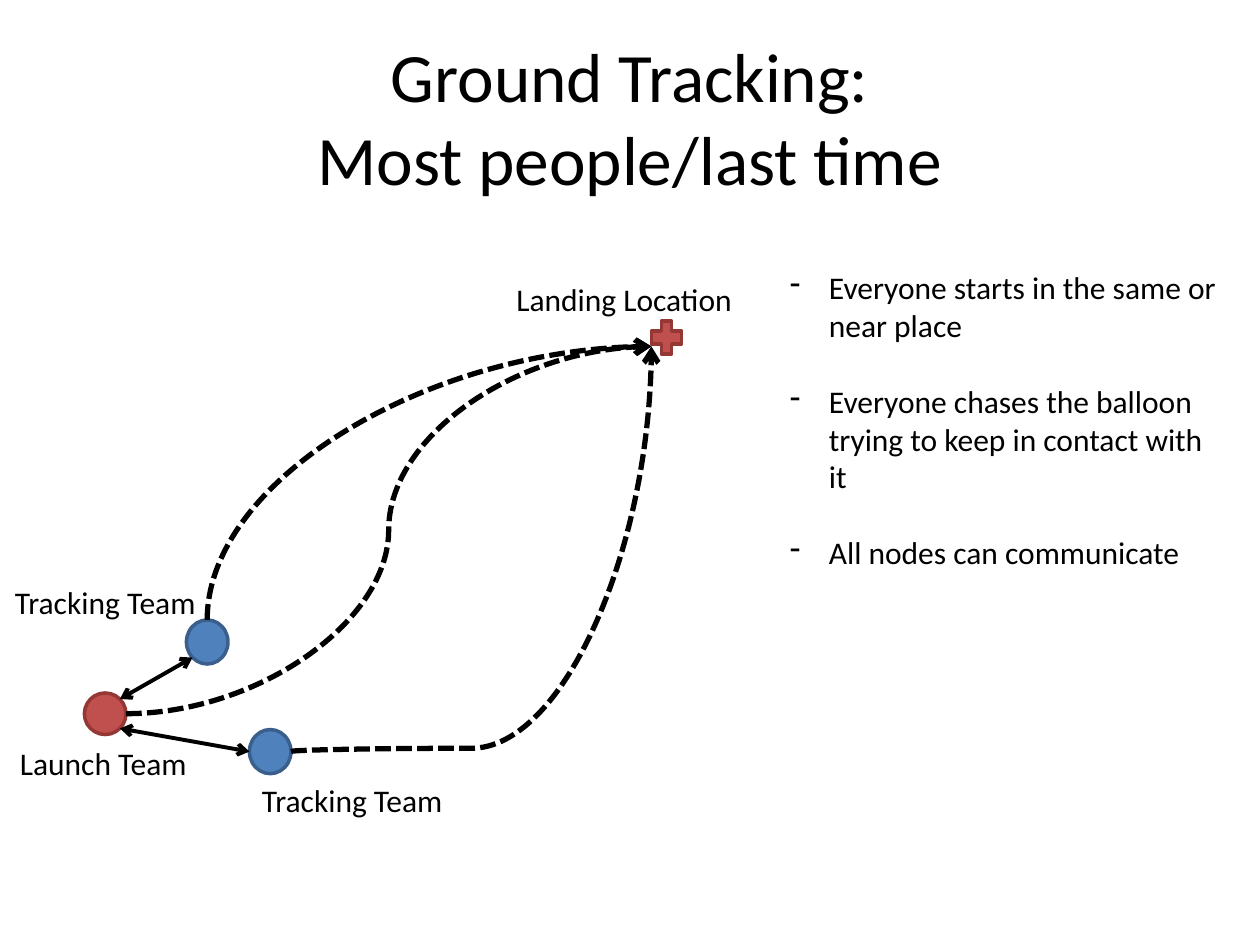
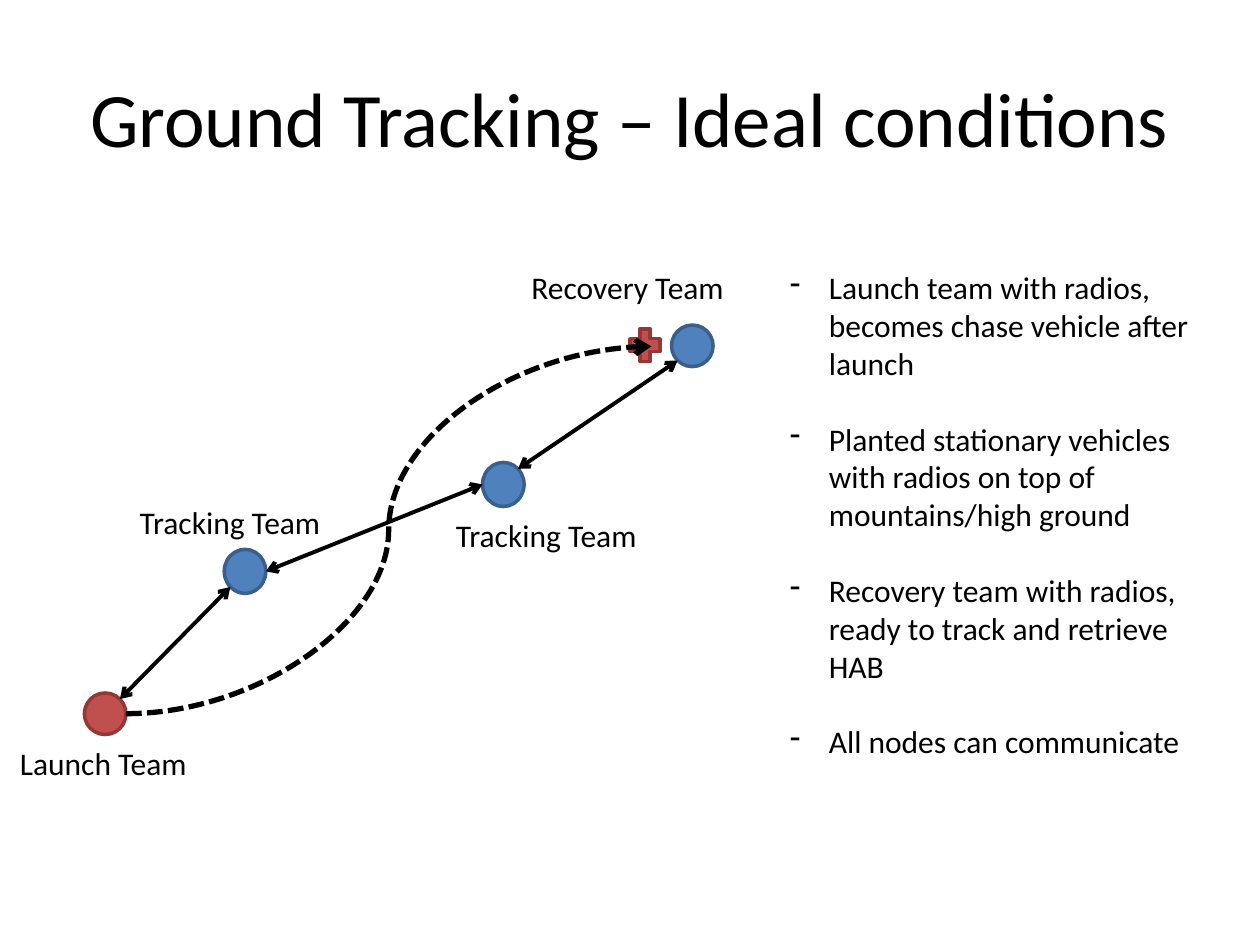
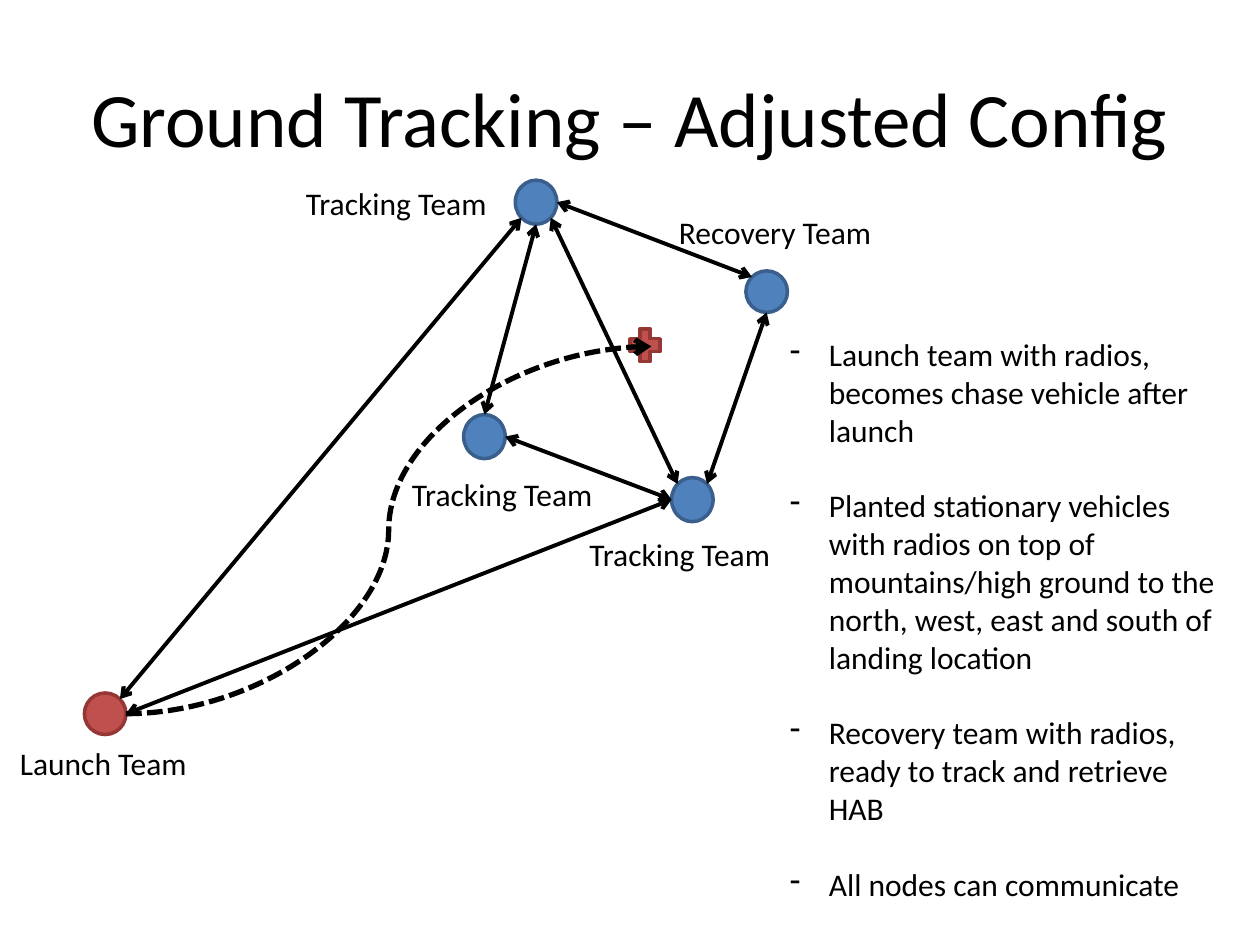
from dataclasses import dataclass
from math import sqrt

from lxml import etree
from pptx import Presentation
from pptx.dml.color import RGBColor
from pptx.enum.dml import MSO_LINE
from pptx.enum.shapes import MSO_CONNECTOR, MSO_SHAPE
from pptx.enum.text import MSO_ANCHOR, PP_ALIGN
from pptx.oxml.ns import qn
from pptx.util import Inches, Pt

OVAL, CROSS = MSO_SHAPE.OVAL, MSO_SHAPE.CROSS
STRAIGHT, CURVE = MSO_CONNECTOR.STRAIGHT, MSO_CONNECTOR.CURVE
DASHED = MSO_LINE.SQUARE_DOT
CENTER, MIDDLE = PP_ALIGN.CENTER, MSO_ANCHOR.MIDDLE

FONT = "Calibri"
BLACK = "000000"
RED, RED_EDGE = "C0504D", "953735"
BLUE, BLUE_EDGE = "4F81BD", "3A5F8C"
BODY_SIZE = 18
BODY_GAP = 21.7
LABEL_HEIGHT = 0.4
LABEL_WIDTHS = {"Tracking Team": 1.65, "Launch Team": 1.54,
                "Recovery Team": 1.74, "Landing Location": 1.94}

# Points on a circle, as fractions of its radii
DIAGONAL = sqrt(0.5)
SITES = {"N": (0, -1), "S": (0, 1), "W": (-1, 0), "E": (1, 0),
         "NW": (-DIAGONAL, -DIAGONAL), "NE": (DIAGONAL, -DIAGONAL),
         "SW": (-DIAGONAL, DIAGONAL), "SE": (DIAGONAL, DIAGONAL)}


@dataclass
class Box:
    left: float
    top: float
    width: float
    height: float

    def inside(self, left, top, width, height):
        return Box(self.left + left, self.top + top, width, height)

    def lengths(self):
        return [Inches(n) for n in (self.left, self.top, self.width, self.height)]

    def site(self, name):
        across, down = SITES[name]
        return (self.left + self.width * (1 + across) / 2,
                self.top + self.height * (1 + down) / 2)


TITLE_BOX = Box(0.5, 0.3, 9, 1.25)
MAP_BOX = Box(0, 1.4, 6.3, 5.2)
LANDING_POINT = (5.17, 1.35)
LAUNCH_SPOT = (0.67, 4.1)


def color(value):
    return RGBColor.from_string(value)


# Text
def format_text(frame, size):
    for para in frame.paragraphs:
        for span in para.runs:
            span.font.name = FONT
            span.font.size = Pt(size)
            span.font.color.rgb = color(BLACK)


def add_text(page, box, text, size, wrap=True):
    frame = page.shapes.add_textbox(*box.lengths()).text_frame
    frame.word_wrap = wrap
    frame.text = text
    format_text(frame, size)
    return frame


def add_title(page, box, text, size):
    frame = add_text(page, box, text, size)
    frame.vertical_anchor = MIDDLE
    frame.paragraphs[0].alignment = CENTER


def add_notes_list(page, box, items):
    frame = add_text(page, box, "\n".join(items), BODY_SIZE)
    for index, para in enumerate(frame.paragraphs):
        para.space_before = Pt(BODY_GAP if index else 0)
        properties = para._p.get_or_add_pPr()
        properties.set("marL", str(Inches(0.31)))
        properties.set("indent", str(-Inches(0.31)))
        etree.SubElement(properties, qn("a:buFontTx"))
        etree.SubElement(properties, qn("a:buChar")).set("char", "-")


# Lines
def add_line(page, kind, start, end, width, ends):
    line = page.shapes.add_connector(kind, *[Inches(n) for n in (*start, *end)])
    line.line.color.rgb = color(BLACK)
    line.line.width = Pt(width)
    outline = line.line._get_or_add_ln()
    for tag in ends:
        etree.SubElement(outline, qn(tag)).set("type", "arrow")
    etree.SubElement(line._element.spPr, qn("a:effectLst"))
    return line


def add_radio_link(page, start, end):
    add_line(page, STRAIGHT, start, end, 2.25, ("a:headEnd", "a:tailEnd"))


def add_route(page, start, end, preset="curvedConnector3", bend=None, upright=False):
    """Dashed path; an upright one is a quarter turn of a level curve."""
    if upright:
        middle_x, middle_y = (start[0] + end[0]) / 2, (start[1] + end[1]) / 2
        half_width = abs(end[1] - start[1]) / 2
        half_height = abs(end[0] - start[0]) / 2
        start = (middle_x + half_width, middle_y + half_height)
        end = (middle_x - half_width, middle_y - half_height)
    route = add_line(page, CURVE, start, end, 3, ("a:tailEnd",))
    route.line.dash_style = DASHED
    properties = route._element.spPr
    if upright:
        properties.find(qn("a:xfrm")).set("rot", "5400000")
    geometry = properties.find(qn("a:prstGeom"))
    geometry.set("prst", preset)
    if bend is not None:
        guide = etree.SubElement(geometry.find(qn("a:avLst")), qn("a:gd"))
        guide.set("name", "adj1")
        guide.set("fmla", f"val {round(bend * 100000)}")


# Map markers
def add_marker(page, kind, box, fill, edge):
    marker = page.shapes.add_shape(kind, *box.lengths())
    marker.shadow.inherit = False
    marker.fill.solid()
    marker.fill.fore_color.rgb = color(fill)
    marker.line.color.rgb = color(edge)
    marker.line.width = Pt(2)
    return marker


def add_team(page, area, spot, height=0.35, fill=BLUE, edge=BLUE_EDGE):
    box = area.inside(*spot, 0.33, height)
    add_marker(page, OVAL, box, fill, edge)
    return box


def add_landing(page, area, spot):
    box = area.inside(*spot, 0.24, 0.26)
    add_marker(page, CROSS, box, RED, RED_EDGE).adjustments[0] = 0.329


def add_map(page, area, teams, links, labels):
    """Draw the teams, their radio links and the labels; return the team boxes."""
    boxes = {"launch": add_team(page, area, LAUNCH_SPOT, 0.33, RED, RED_EDGE)}
    for name, spot in teams.items():
        boxes[name] = add_team(page, area, spot, 0.33 if name == "recovery" else 0.35)
    for first, first_site, second, second_site in links:
        add_radio_link(page, boxes[first].site(first_site), boxes[second].site(second_site))
    for text, *spot in [("Launch Team", 0.06, 4.46), *labels]:
        box = area.inside(*spot, LABEL_WIDTHS[text], LABEL_HEIGHT)
        add_text(page, box, text, BODY_SIZE, wrap=False)
    return boxes


def landing_point(area):
    return area.left + LANDING_POINT[0], area.top + LANDING_POINT[1]


# Slides
def add_page(deck, title, size, items, list_box):
    page = deck.slides.add_slide(deck.slide_layouts[6])
    add_title(page, TITLE_BOX, title, size)
    add_notes_list(page, list_box, items)
    return page


def add_chase_page(deck):
    page = add_page(deck, "Ground Tracking:\vMost people/last time", 39.6, [
        "Everyone starts in the same or near place",
        "Everyone chases the balloon trying to keep in contact with it",
        "All nodes can communicate"], Box(6.17, 2.08, 3.58, 2.83))
    boxes = add_map(
        page, MAP_BOX,
        teams={"upper": (1.48, 3.52), "lower": (1.98, 4.39)},
        links=[("upper", "SW", "launch", "NE"), ("lower", "W", "launch", "SE")],
        labels=[("Tracking Team", 0.02, 3.18), ("Tracking Team", 1.98, 4.75),
                ("Landing Location", 4, 0.77)])
    target = landing_point(MAP_BOX)
    add_route(page, boxes["launch"].site("E"), target)
    add_route(page, boxes["lower"].site("E"), target, bend=0.008, upright=True)
    add_route(page, boxes["upper"].site("N"), target, "curvedConnector2", upright=True)
    add_landing(page, MAP_BOX, (5.17, 1.15))


def add_planted_page(deck, title, high_ground, list_box, **map_parts):
    """A slide where stationary teams track a single flight."""
    page = add_page(deck, title, 44, [
        "Launch team with radios, becomes chase vehicle after launch",
        f"Planted stationary vehicles with radios on top of {high_ground}",
        "Recovery team with radios, ready to track and retrieve HAB",
        "All nodes can communicate"], list_box)
    boxes = add_map(page, MAP_BOX, **map_parts)
    add_landing(page, MAP_BOX, (5, 1.21))
    add_route(page, boxes["launch"].site("E"), landing_point(MAP_BOX))


def main():
    deck = Presentation()
    deck.slide_width, deck.slide_height = Inches(10), Inches(7.5)

    add_chase_page(deck)
    add_planted_page(
        deck, "Ground Tracking – Ideal conditions", "mountains/high ground",
        Box(6.17, 2.08, 3.58, 4.34),
        teams={"recovery": (5.33, 1.18), "near": (1.78, 2.96), "far": (3.83, 2.27)},
        links=[("near", "SW", "launch", "NE"), ("far", "W", "near", "E"),
               ("recovery", "SW", "far", "NE")],
        labels=[("Recovery Team", 4.12, 0.68), ("Tracking Team", 1.01, 2.54),
                ("Tracking Team", 3.52, 2.65)])
    add_planted_page(
        deck, "Ground Tracking – Adjusted Config",
        "mountains/high ground to the north, west, east and south of landing location",
        Box(6.17, 2.61, 3.58, 4.95),
        teams={"recovery": (5.92, 0.75), "north": (4.09, 0.03),
               "south": (5.33, 2.39), "west": (3.68, 1.89)},
        links=[("north", "SW", "launch", "NE"), ("south", "NW", "north", "SE"),
               ("recovery", "S", "south", "NE"), ("south", "W", "launch", "E"),
               ("recovery", "NW", "north", "E"), ("west", "N", "north", "S"),
               ("south", "W", "west", "E")],
        labels=[("Recovery Team", 5.29, 0.24), ("Tracking Team", 2.33, 0.01),
                ("Tracking Team", 4.58, 2.8), ("Tracking Team", 3.17, 2.32)])

    deck.save("out.pptx")


if __name__ == "__main__":
    main()
